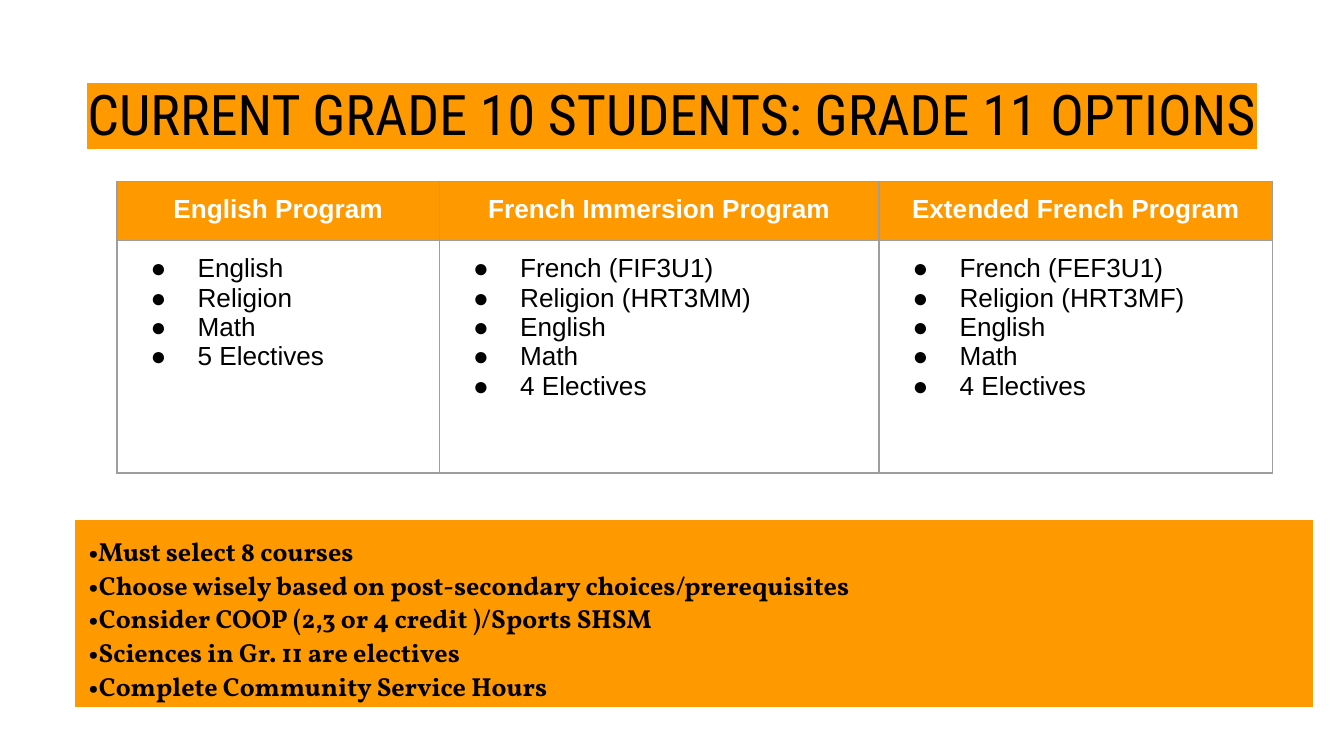
"""Build the slide of Grade 11 options."""
from pptx import Presentation
from pptx.dml.color import RGBColor
from pptx.enum import shapes, text
from pptx.oxml import parse_xml
from pptx.oxml.ns import nsdecls
from pptx.util import Inches, Pt

TITLE = "CURRENT GRADE 10 STUDENTS: GRADE 11 OPTIONS"
PLANS = [
    ("English Program", 2.4, ["English", "Religion", "Math", "5 Electives"]),
    ("French Immersion Program", 3.27,
     ["French (FIF3U1)", "Religion (HRT3MM)", "English", "Math", "4 Electives"]),
    ("Extended French Program", 2.93,
     ["French (FEF3U1)", "Religion (HRT3MF)", "English", "Math", "4 Electives"]),
]
NOTES = [
    "•Must select 8 courses",
    "•Choose wisely based on post-secondary choices/prerequisites",
    "•Consider COOP (2,3 or 4 credit )/Sports SHSM",
    "•Sciences in Gr. 11 are electives",
    "•Complete Community Service Hours",
]
ROWS = [0.44, 1.73]
THEME = {"orange": "FF9900", "ink": "000000", "white": "FFFFFF", "grid": "9E9E9E",
         "head": "Roboto Condensed", "body": "Arial", "note": "Vollkorn",
         "big": 30, "small": 14, "line": 0.75}


def node(tag, attrs="", inner=""):
    return parse_xml(f"<a:{tag} {nsdecls('a')} {attrs}>{inner}</a:{tag}>")


def tint(tone):
    return f'<a:srgbClr val="{THEME[tone]}"/>'


def style(font, face, size, ink, bold=False):
    font.size, font.bold = Pt(THEME[size]), bold
    font.color.rgb = RGBColor.from_string(THEME[ink])
    font.name = THEME[face]


def paint(part, tone):
    part.fill.solid()
    part.fill.fore_color.rgb = RGBColor.from_string(THEME[tone])


def pad(part):
    part.margin_left = part.margin_right = Inches(0.1)
    part.margin_top = part.margin_bottom = Inches(0.1)


def write(frame, lines, align, *look):
    frame.text = "\n".join(lines)
    for para in frame.paragraphs:
        para.alignment = align
        style(para.font, *look)
    return frame.paragraphs


def bullet(para):
    props = para._p.get_or_add_pPr()
    props.set("marL", str(Inches(0.5)))
    props.set("indent", str(Inches(-0.35)))
    marks = [node("buClr", inner=tint("ink")),
             node("buSzPts", f'val="{THEME["small"] * 100}"'),
             node("buFont", f'typeface="{THEME["body"]}"'),
             node("buChar", 'char="●"')]
    for spot, mark in enumerate(marks):
        props.insert(spot, mark)


def border(cell):
    props = cell._tc.get_or_add_tcPr()
    for spot, side in enumerate("LRTB"):
        props.insert(spot, node(f"ln{side}", f'w="{Pt(THEME["line"])}"',
                                f"<a:solidFill>{tint('grid')}</a:solidFill>"))


def title(slide):
    box = slide.shapes.add_textbox(*map(Inches, (0.34, 0.49, 9.32, 0.63)))
    frame = box.text_frame
    frame.word_wrap = True
    pad(frame)
    para = frame.paragraphs[0]
    para.alignment = text.PP_ALIGN.CENTER
    run = para.add_run()
    run.text = TITLE
    style(run.font, "head", "big", "ink")
    run.font._element.insert(1, node("highlight", inner=tint("orange")))


def plans(slide):
    wide = sum(plan[1] for plan in PLANS)
    size = map(Inches, (0.87, 1.35, wide, sum(ROWS)))
    table = slide.shapes.add_table(len(ROWS), len(PLANS), *size).table
    table.first_row = table.horz_banding = False
    for row, high in zip(table.rows, ROWS):
        row.height = Inches(high)
    for col, (name, width, items) in enumerate(PLANS):
        table.columns[col].width = Inches(width)
        head, body = table.cell(0, col), table.cell(1, col)
        write(head.text_frame, [name], text.PP_ALIGN.CENTER,
              "body", "small", "white", True)
        for para in write(body.text_frame, items, text.PP_ALIGN.LEFT,
                          "body", "small", "ink"):
            bullet(para)
        paint(head, "orange")
        body.fill.background()
        for cell in (head, body):
            pad(cell)
            border(cell)


def notes(slide):
    panel = slide.shapes.add_shape(shapes.MSO_SHAPE.RECTANGLE,
                                   *map(Inches, (0.56, 3.87, 9.21, 1.39)))
    panel.shadow.inherit = False
    paint(panel, "orange")
    panel.line.fill.background()
    frame = panel.text_frame
    frame.word_wrap = True
    frame.vertical_anchor = text.MSO_ANCHOR.TOP
    pad(frame)
    for para in write(frame, NOTES, text.PP_ALIGN.LEFT, "note", "small", "ink", True):
        para.line_spacing = 1.07


def main():
    deck = Presentation()
    deck.slide_width = Inches(10)
    deck.slide_height = deck.slide_width * 9 // 16
    slide = deck.slides.add_slide(deck.slide_layouts[6])
    title(slide)
    plans(slide)
    notes(slide)
    deck.save("out.pptx")


if __name__ == "__main__":
    main()
